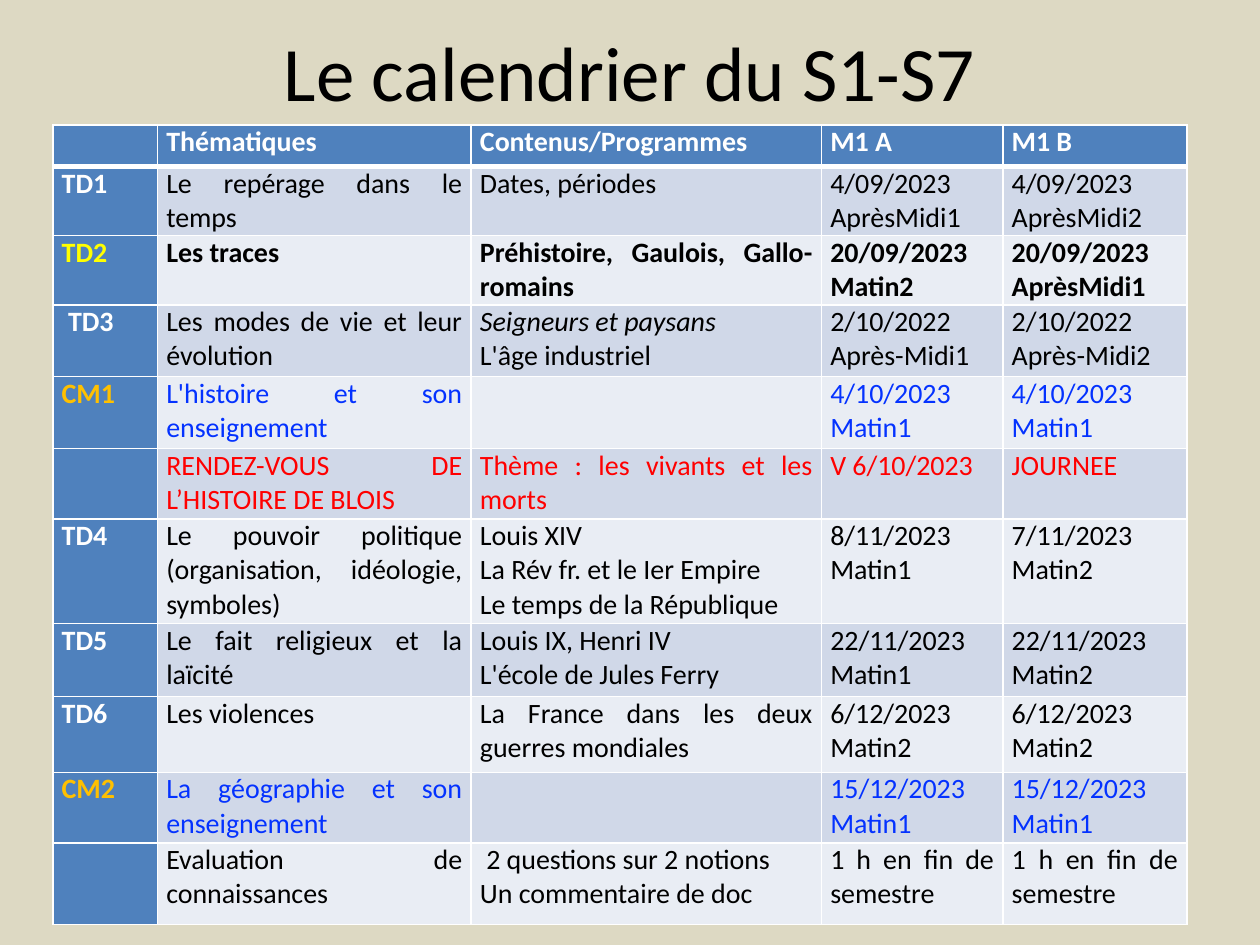
from lxml.etree import SubElement
from pptx import Presentation
from pptx.dml.color import RGBColor
from pptx.enum.text import MSO_ANCHOR, PP_ALIGN
from pptx.oxml.ns import qn
from pptx.util import Inches, Pt

WHITE, BLACK, BLUE, RED = "FFFFFF", "000000", "0432FF", "FF0000"
YELLOW, ORANGE = "FFFF00", "FFC000"
HEADER_FILL, BANDS = "4F81BD", ("D0D8E8", "E9EDF4")

COLUMN_WIDTHS = (0.83, 2.49, 2.78, 1.44, 1.46)
ROW_HEIGHTS = (0.33, 0.55, 0.55, 0.57, 0.57, 0.56, 0.83, 0.58, 0.6, 0.56, 0.65)

# Cell texts; a line break starts a new paragraph
ROWS = (
    ("", "Thématiques", "Contenus/Programmes", "M1 A", "M1 B"),
    ("TD1", "Le repérage dans le temps", "Dates, périodes",
     "4/09/2023\nAprèsMidi1", "4/09/2023\nAprèsMidi2"),
    ("TD2", "Les traces", "Préhistoire, Gaulois, Gallo-romains",
     "20/09/2023\nMatin2", "20/09/2023\nAprèsMidi1"),
    (" TD3", "Les modes de vie et leur évolution",
     "Seigneurs et paysans\nL'âge industriel",
     "2/10/2022\nAprès-Midi1", "2/10/2022\nAprès-Midi2"),
    ("CM1", "L'histoire et son enseignement", "",
     "4/10/2023\nMatin1", "4/10/2023\nMatin1"),
    ("", "RENDEZ-VOUS DE L’HISTOIRE DE BLOIS", "Thème : les vivants et les morts",
     "V 6/10/2023", "JOURNEE"),
    ("TD4", "Le pouvoir politique (organisation, idéologie, symboles)",
     "Louis XIV\nLa Rév fr. et le Ier Empire\nLe temps de la République",
     "8/11/2023\nMatin1", "7/11/2023\nMatin2"),
    ("TD5", "Le fait religieux et la laïcité",
     "Louis IX, Henri IV\nL'école de Jules Ferry",
     "22/11/2023\nMatin1", "22/11/2023\nMatin2"),
    ("TD6", "Les violences", "La France dans les deux guerres mondiales",
     "6/12/2023\nMatin2", "6/12/2023\nMatin2"),
    ("CM2", "La géographie et son enseignement", "",
     "15/12/2023\nMatin1", "15/12/2023\nMatin1"),
    ("", "Evaluation de connaissances",
     " 2 questions sur 2 notions\nUn commentaire de doc",
     "1 h en fin de semestre", "1 h en fin de semestre"),
)

# Exceptions to the usual formats, by row number or by wording
LABEL_COLORS = {"TD2": YELLOW, "CM1": ORANGE, "CM2": ORANGE}
ROW_COLORS = {4: BLUE, 5: RED, 9: BLUE}
BOLD_ROWS = (0, 2)
ITALIC_LINES = ("Seigneurs et paysans",)
LEFT_LABELS = (" TD3",)


def color(hex_string):
    return RGBColor.from_string(hex_string)


def write_text(frame, text, size=16, text_color=BLACK, bold=False,
               align=PP_ALIGN.JUSTIFY):
    frame.word_wrap = True
    for index, line in enumerate(text.split("\n")):
        paragraph = frame.add_paragraph() if index else frame.paragraphs[0]
        paragraph.alignment = align
        if not line:
            continue
        run = paragraph.add_run()
        run.text = line
        font = run.font
        font.name, font.size, font.bold = "Calibri", Pt(size), bold
        font.italic = line in ITALIC_LINES
        font.color.rgb = color(text_color)


def set_borders(cell, top=1, bottom=1):
    properties = cell._tc.get_or_add_tcPr()
    sides = (("a:lnL", 1), ("a:lnR", 1), ("a:lnT", top), ("a:lnB", bottom))
    for position, (tag, width) in enumerate(sides):
        line = SubElement(properties, qn(tag), w=str(Pt(width)))
        fill = SubElement(line, qn("a:solidFill"))
        SubElement(fill, qn("a:srgbClr"), val=WHITE)
        properties.insert(position, line)


def format_cell(cell, row, column, text):
    is_header = row == 0 or column == 0
    cell.margin_left = cell.margin_right = Inches(0.07)
    cell.margin_top = cell.margin_bottom = 0
    cell.fill.solid()
    cell.fill.fore_color.rgb = color(HEADER_FILL if is_header else BANDS[(row - 1) % 2])
    set_borders(cell, top=3 if row == 1 else 1, bottom=3 if row == 0 else 1)
    if is_header:
        text_color = LABEL_COLORS.get(text, WHITE)
    else:
        text_color = ROW_COLORS.get(row, BLACK)
    write_text(cell.text_frame, text, text_color=text_color,
               bold=is_header or row in BOLD_ROWS,
               align=PP_ALIGN.LEFT if text in LEFT_LABELS else PP_ALIGN.JUSTIFY)


def add_title(slide, text):
    box = slide.shapes.add_textbox(Inches(0.5), 0, Inches(9), Inches(1.12))
    box.text_frame.vertical_anchor = MSO_ANCHOR.MIDDLE
    write_text(box.text_frame, text, size=44, align=PP_ALIGN.CENTER)


def add_calendar(slide):
    frame = slide.shapes.add_table(
        len(ROWS), len(COLUMN_WIDTHS), Inches(0.42), Inches(0.99),
        Inches(sum(COLUMN_WIDTHS)), Inches(sum(ROW_HEIGHTS)))
    table = frame.table
    table.horz_banding = False
    table.first_col = True
    for column, width in zip(table.columns, COLUMN_WIDTHS):
        column.width = Inches(width)
    for row, height in zip(table.rows, ROW_HEIGHTS):
        row.height = Inches(height)
    for row, texts in enumerate(ROWS):
        for column, text in enumerate(texts):
            format_cell(table.cell(row, column), row, column, text)


def main():
    presentation = Presentation()
    presentation.slide_width, presentation.slide_height = Inches(10), Inches(7.5)
    slide = presentation.slides.add_slide(presentation.slide_layouts[6])

    # Background
    slide.background.fill.solid()
    slide.background.fill.fore_color.rgb = color("DDD9C3")

    # Title and course calendar
    add_title(slide, "Le calendrier du S1-S7")
    add_calendar(slide)
    presentation.save("out.pptx")


if __name__ == "__main__":
    main()
